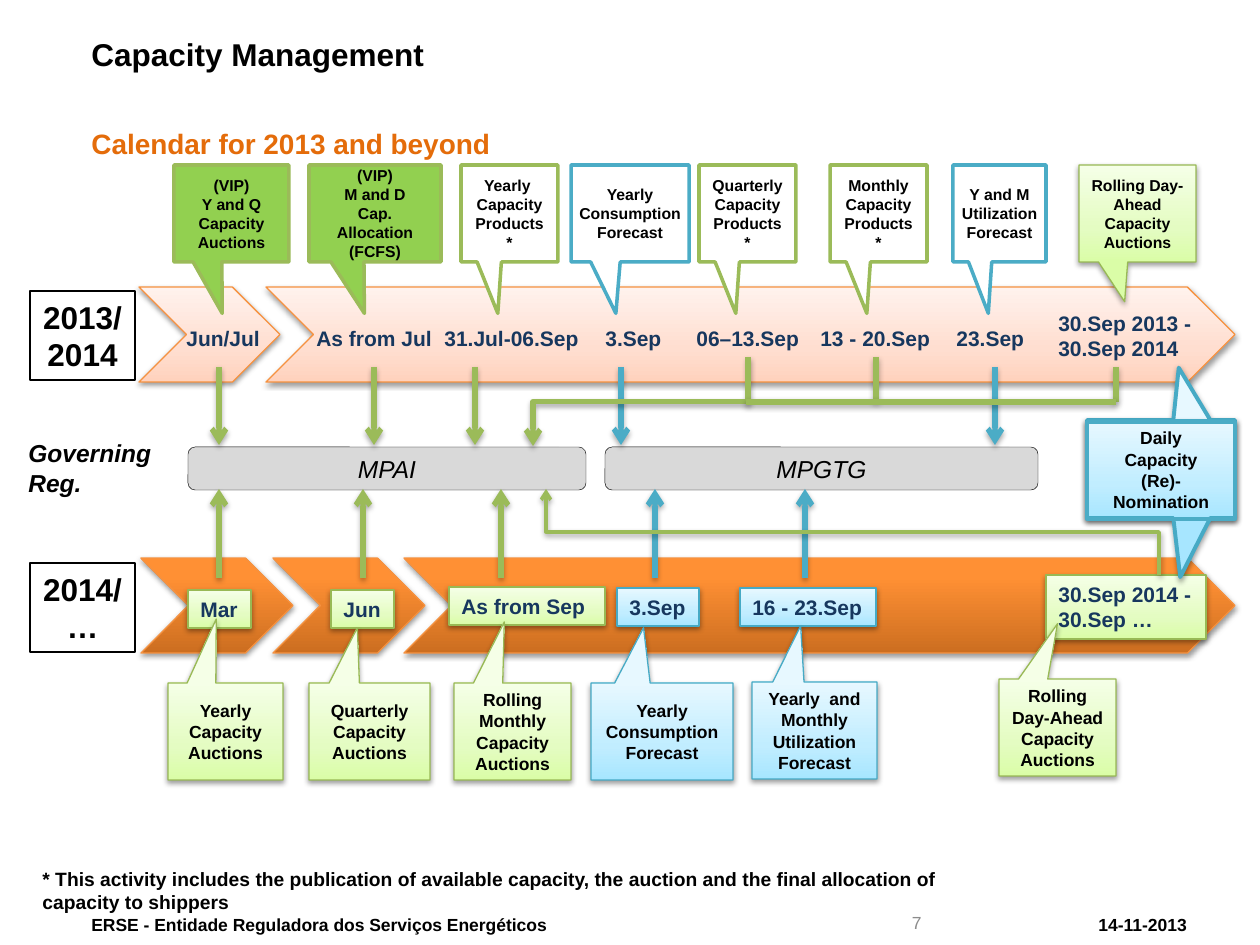
from pptx import Presentation
from pptx.dml.color import RGBColor
from pptx.enum.shapes import MSO_CONNECTOR, MSO_SHAPE
from pptx.enum.text import MSO_ANCHOR, PP_ALIGN
from pptx.oxml import parse_xml
from pptx.oxml.ns import nsdecls
from pptx.util import Pt

RECT, ROUND = MSO_SHAPE.RECTANGLE, MSO_SHAPE.ROUNDED_RECTANGLE
CHEVRON, CALLOUT = MSO_SHAPE.CHEVRON, MSO_SHAPE.RECTANGULAR_CALLOUT
STRAIGHT, ELBOW = MSO_CONNECTOR.STRAIGHT, MSO_CONNECTOR.ELBOW
LEFT, CENTER, RIGHT = PP_ALIGN.LEFT, PP_ALIGN.CENTER, PP_ALIGN.RIGHT
TOP, MIDDLE = MSO_ANCHOR.TOP, MSO_ANCHOR.MIDDLE

FONT = "Arial"
C = {"black": "000000", "white": "FFFFFF", "heading": "E46C0A", "date": "17375E",
     "page": "8C8C8C", "bar": "D9D9D9", "vip": "92D050", "green": "9BBB59",
     "green_edge": "98B955", "blue": "4BACC6", "blue_edge": "46AAC5", "orange": "F69240"}
GRADIENTS = {
    "peach": ((0, "FFD2BD"), (35, "FFDED0"), (100, "FFF2ED")),
    "amber": ((0, "CC6E20"), (80, "FF9034"), (100, "FF9136")),
    "lime": ((0, "DAFDA7"), (35, "E4FCC2"), (100, "F5FFE7")),
    "sky": ((0, "A7E6FF"), (35, "C1EDFF"), (100, "E7F8FF")),
}
EDGES = {"lime": "green_edge", "sky": "blue_edge"}


def px(v):
    return round(v * 914400 / 126)


def rgb(name):
    return RGBColor.from_string(C[name])


def write(sp, text, size=12, color="black", bold=True, italic=False, align=LEFT,
          anchor=TOP, wrap=False, inset=None):
    tf = sp.text_frame
    tf.word_wrap, tf.vertical_anchor = wrap, anchor
    if inset is not None:
        tf.margin_left = tf.margin_right = px(inset)
    for i, line in enumerate(text.split("\n")):
        p = tf.add_paragraph() if i else tf.paragraphs[0]
        p.alignment = align
        r = p.add_run()
        r.text = line
        r.font.name, r.font.size = FONT, Pt(size)
        r.font.bold, r.font.italic = bold, italic
        r.font.color.rgb = rgb(color)


def textbox(s, x, y, w, h, text, **fmt):
    write(s.shapes.add_textbox(px(x), px(y), px(w), px(h)), text, **fmt)


def soft_shadow(effects, opacity=38):
    effects.append(parse_xml(
        f'<a:outerShdw {nsdecls("a")} blurRad="40000" dist="20000" dir="5400000" '
        f'rotWithShape="0"><a:srgbClr val="000000"><a:alpha val="{opacity}000"/>'
        '</a:srgbClr></a:outerShdw>'))


def shape(s, kind, x, y, w, h, fill=None, line="black", width=0.75, adj=()):
    """Gradient shapes get the soft shadow; plain ones stay flat."""
    sp = s.shapes.add_shape(kind, px(x), px(y), px(w), px(h))
    sp.shadow.inherit = False
    for i, v in enumerate(adj):
        sp.adjustments[i] = v
    if fill in GRADIENTS:
        stops = "".join(f'<a:gs pos="{pos}000"><a:srgbClr val="{c}"/></a:gs>'
                        for pos, c in GRADIENTS[fill])
        spPr = sp._element.spPr
        spPr.insert(2, parse_xml(
            f'<a:gradFill {nsdecls("a")} rotWithShape="1"><a:gsLst>{stops}</a:gsLst>'
            '<a:lin ang="16200000" scaled="0"/></a:gradFill>'))
        soft_shadow(spPr[-1])
    elif fill:
        sp.fill.solid()
        sp.fill.fore_color.rgb = rgb(fill)
    else:
        sp.fill.background()
    sp.line.color.rgb = rgb(line)
    sp.line.width = Pt(width)
    return sp


def connector(s, x1, y1, x2, y2, color="green", width=3, arrow=True, elbow=False):
    """An elbow leaves its start vertically and runs to the left."""
    if elbow:
        cx, cy = (x1 + x2) / 2, (y1 + y2) / 2
        w, h = abs(y2 - y1), abs(x2 - x1)
        c = s.shapes.add_connector(ELBOW, px(cx - w / 2), px(cy - h / 2),
                                   px(cx + w / 2), px(cy + h / 2))
        xfrm = c._element.spPr.xfrm
        xfrm.set("rot", "5400000" if y2 > y1 else "16200000")
        if y2 < y1:
            xfrm.set("flipV", "1")
    else:
        c = s.shapes.add_connector(STRAIGHT, px(x1), px(y1), px(x2), px(y2))
    c.line.color.rgb = rgb(color)
    c.line.width = Pt(width)
    if arrow:
        c.line._get_or_add_ln().append(parse_xml(f'<a:tailEnd {nsdecls("a")} type="arrow"/>'))
    effects = parse_xml(f'<a:effectLst {nsdecls("a")}/>')
    soft_shadow(effects, 35)
    c._element.spPr.append(effects)


def header(s, x, y, w):
    textbox(s, x, y, w, 79, "Capacity Management", size=18, wrap=True)
    textbox(s, x, y + 91, w, 39, "Calendar for 2013 and beyond", size=16,
            color="heading", wrap=True)


def year_label(s, x, y, text):
    write(shape(s, RECT, x, y, 105, 89), text, size=18, align=CENTER, anchor=MIDDLE)


def band_2013(s, x, y):
    for cx, w in ((236, 969), (109, 141)):
        shape(s, CHEVRON, x + cx, y + 122, w, 95, "peach", "orange")
    year_label(s, x, y + 126, "2013/\n2014")
    # Dates
    for dx, w, text in ((144, 100, "Jun/Jul"), (274, 142, "As from Jul"),
                        (402, 161, "31.Jul-06.Sep"), (563, 82, "3.Sep"),
                        (654, 129, "06–13.Sep"), (778, 136, "13 - 20.Sep"),
                        (914, 93, "23.Sep")):
        textbox(s, x + dx, y + 154, w, 38, text, color="date")
    textbox(s, x + 1016, y + 139, 165, 64, "30.Sep 2013 -\n30.Sep 2014", color="date")
    # Callouts above the dates
    for cx, w, fill, line, tip, inset, text in (
            (144, 115, "vip", "green", -0.08, None, "(VIP)\nY and Q Capacity Auctions"),
            (279, 132, "vip", "green", -0.08, 10, "(VIP)\nM and D\nCap. Allocation (FCFS)"),
            (431, 97, "white", "green", -0.12, None, "Yearly \nCapacity Products *"),
            (541, 118, "white", "blue", -0.12, 5, "Yearly Consumption Forecast"),
            (669, 97, "white", "green", -0.12, None, "Quarterly\nCapacity Products *"),
            (800, 97, "white", "green", -0.12, None, "Monthly\nCapacity Products *"),
            (923, 93, "white", "blue", -0.12, 5, "Y and M Utilization Forecast"),
            (1049, 117, "lime", "green_edge", -0.11, None,
             "Rolling Day-Ahead Capacity Auctions")):
        soft = fill == "lime"
        sp = shape(s, CALLOUT, x + cx, y, w, 97, fill, line, 0.75 if soft else 2,
                   (tip, 0.91 if soft else 1.03))
        write(sp, text, size=9, align=CENTER, anchor=MIDDLE, wrap=True, inset=inset)


def band_2014(s, x, y):
    for cx, w in ((111, 152), (243, 152), (374, 831)):
        shape(s, CHEVRON, x + cx, y, w, 95, "amber", "orange")
    year_label(s, x, y + 5, "2014/\n…")
    # Date tags
    for tx, ty, w, h, fill, text in (
            (158, 32, 63, 38, "lime", "Mar"), (301, 32, 63, 38, "lime", "Jun"),
            (419, 29, 156, 38, "lime", "As from Sep"), (587, 30, 82, 38, "sky", "3.Sep"),
            (710, 30, 136, 38, "sky", "16 - 23.Sep"),
            (1016, 17, 160, 64, "lime", "30.Sep 2014 -\n30.Sep …")):
        write(shape(s, RECT, x + tx, y + ty, w, h, fill, EDGES[fill]), text, color="date")
    # Callouts below the tags
    for cx, cy, w, fill, tip, text in (
            (138, 125, 115, "lime", (-0.08, -1.16), "Yearly Capacity Auctions"),
            (279, 125, 121, "lime", (-0.1, -1.07), "Quarterly Capacity Auctions"),
            (424, 125, 117, "lime", (-0.07, -1.13), "Rolling Monthly Capacity Auctions"),
            (561, 125, 142, "sky", (-0.13, -1.07), "Yearly\nConsumption Forecast"),
            (722, 124, 125, "sky", (-0.11, -1.08),
             "Yearly  and Monthly Utilization\nForecast"),
            (969, 121, 117, "lime", (0, -1.07), "Rolling Day-Ahead Capacity Auctions")):
        sp = shape(s, CALLOUT, x + cx, y + cy, w, 97, fill, EDGES[fill], adj=tip)
        write(sp, text, size=10, align=CENTER, anchor=MIDDLE, wrap=True)


def daily_nomination(s, x, y, w, h):
    shape(s, CALLOUT, x, y, w, h, "sky", "blue_edge", 2.25, (0.12, -1.04))
    sp = shape(s, CALLOUT, x, y + 1, w, h, "sky", "blue_edge", 2.25, (0.13, 1.11))
    write(sp, "Daily\nCapacity\n(Re)-Nomination", size=10, align=CENTER,
          anchor=MIDDLE, wrap=True)
    shape(s, RECT, x, y + 2, w, h, line="blue", width=2)


def governing(s, x, y):
    textbox(s, x, y + 75, 149, 72, "Governing\nReg.", size=14, italic=True)
    for bx, w, text in ((172, 398, "MPAI"), (589, 433, "MPGTG")):
        sp = shape(s, ROUND, x + bx, y + 90, w, 43, "bar", width=0.25)
        write(sp, text, size=14, bold=False, italic=True, align=CENTER, anchor=MIDDLE)
    # Arrows down from 2013/2014 and up from 2014
    for start, end, ends in (
            (10, 88, ((203, "green"), (358, "green"), (459, "green"),
                      (605, "blue"), (979, "blue"))),
            (221, 132, ((203, "green"), (347, "green"), (485, "green"),
                        (639, "blue"), (789, "blue")))):
        for ax, color in ends:
            connector(s, x + ax, y + start, x + ax, y + end, color)
    # Shared routes into MPAI
    connector(s, x + 1143, y + 218, x + 530, y + 132, width=2, elbow=True)
    connector(s, x + 732, y, x + 517, y + 89, elbow=True)
    for x1, y1, x2 in ((860, 0, 860), (1100, 10, 1100), (730, 45, 1100)):
        connector(s, x + x1, y + y1, x + x2, y + 45, arrow=False)


def footer(s, x, y):
    textbox(s, x, y, 990, 37, "* This activity includes the publication of available capacity, "
            "the auction and the final allocation of capacity to shippers", size=11, wrap=True)
    textbox(s, x + 49, y + 51, 481, 25, "ERSE - Entidade Reguladora dos Serviços Energéticos",
            size=10, anchor=MIDDLE, wrap=True)
    textbox(s, x + 797, y + 49, 107, 25, "7", size=10, color="page", bold=False,
            align=RIGHT, anchor=MIDDLE, wrap=True)
    textbox(s, x + 1049, y + 51, 120, 25, "14-11-2013", size=10, align=RIGHT,
            anchor=MIDDLE, wrap=True)


def main():
    prs = Presentation()
    prs.slide_width, prs.slide_height = px(1260), px(945)
    s = prs.slides.add_slide(prs.slide_layouts[6])
    header(s, 79, 29, 1113)
    band_2013(s, 30, 165)
    band_2014(s, 30, 558)
    daily_nomination(s, 1087, 420, 148, 97)
    governing(s, 16, 357)
    footer(s, 30, 861)
    prs.save("out.pptx")


if __name__ == "__main__":
    main()
